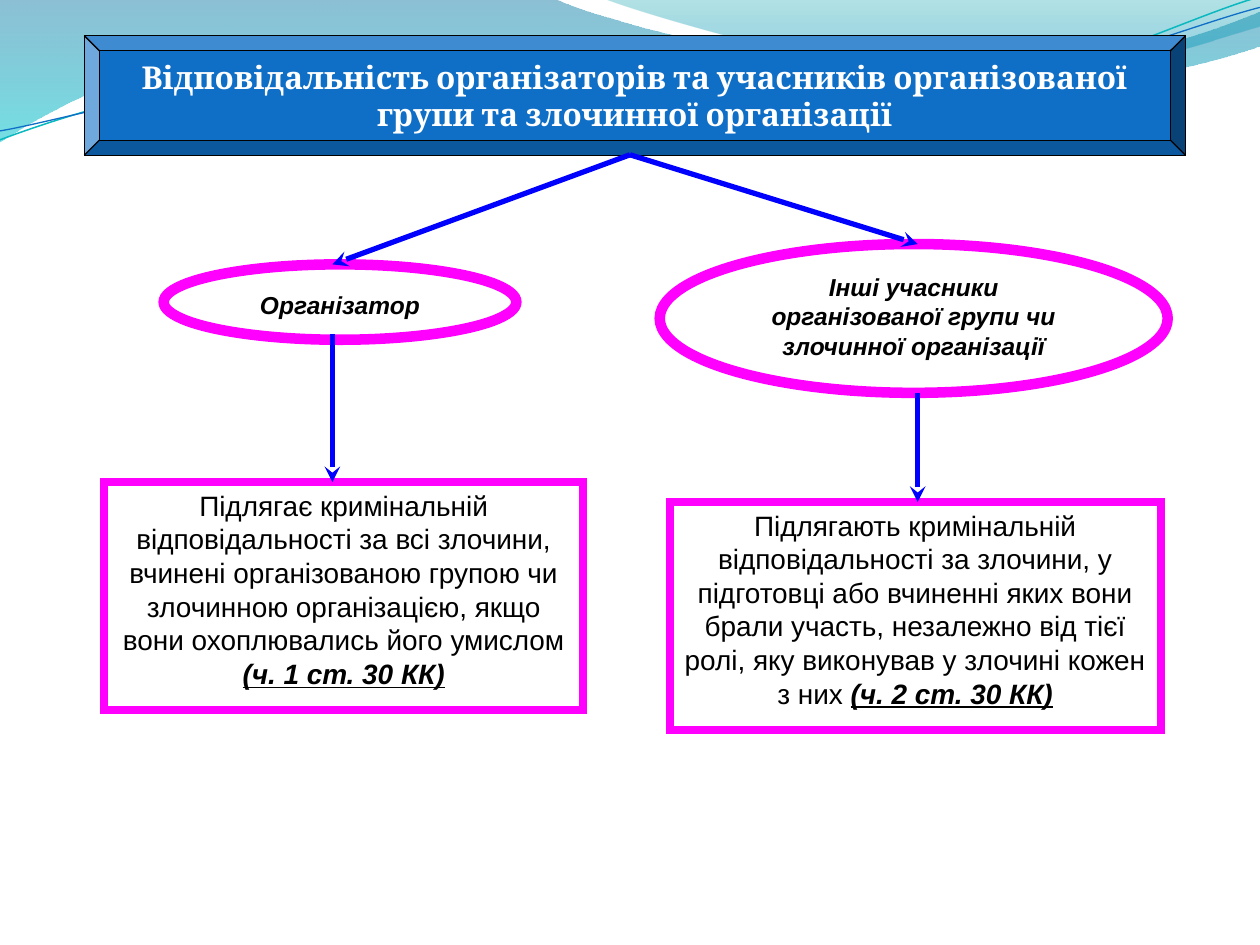
import dataclasses

import pptx
import pptx.dml.color
import pptx.enum.shapes
import pptx.enum.text
import pptx.oxml
import pptx.oxml.ns
import pptx.util

Cm = pptx.util.Cm
Pt = pptx.util.Pt
RGB = pptx.dml.color.RGBColor.from_string
SHAPES = pptx.enum.shapes.MSO_SHAPE
ANCHOR = pptx.enum.text.MSO_ANCHOR
qn = pptx.oxml.ns.qn
NAMESPACE = pptx.oxml.ns.nsdecls("a")


@dataclasses.dataclass(frozen=True)
class Theme:
    white: str = "FFFFFF"
    black: str = "000000"
    banner: str = "0F6FC6"
    border: str = "FF00FF"
    arrow: str = "0000FF"
    teal: str = "0AB8BF"
    lower_wave: tuple = ((0, "0074A1", 45), (1, "00C6CF", 55))
    upper_wave: tuple = ((0, "00A1A9", 30), (0.8, "008BBF", 45))
    heading_font: str = "Cambria"
    text_font: str = "Arial"
    heading_size: int = 18
    role_size: int = 14
    rule_size: int = 16


THEME = Theme()
HEADING = {"name": THEME.heading_font, "size": Pt(THEME.heading_size), "bold": True}
ROLE = {"name": THEME.text_font, "size": Pt(THEME.role_size), "bold": True, "italic": True}
RULE = {"name": THEME.text_font, "size": Pt(THEME.rule_size)}
ARTICLE = RULE | {"bold": True, "italic": True, "underline": True}

LOWER_WAVE = [
    [(0, 0)], [(11.18, -0.03)],
    [(12.09, 0.43), (16.87, 1.6), (19.25, 1.6)],
    [(21.67, 1.6), (24.33, 0.66), (25.4, 0.23)],
    [(25.43, 0.91)],
    [(24.97, 1.12), (22.1, 1.93), (18.95, 1.91)],
    [(15.8, 1.91), (9.7, 0.71), (6.53, 0.86)],
    [(3.28, 0.91), (1.17, 2.11), (-0.03, 2.87)],
]
UPPER_WAVE = [
    [(12.17, -0.03)],
    [(12.93, 0.28), (17.32, 1.57), (19.53, 1.65)],
    [(21.74, 1.75), (24.41, 0.81), (25.4, 0.53)],
    [(25.4, 0)],
]
TEAL_STRAND = [
    [(0, 2.82)],
    [(1.22, 2.36), (4.01, 1.45), (7.04, 1.32)],
    [(10.03, 1.19), (15.06, 2.26), (18.11, 2.03)],
    [(21.16, 1.8), (23.83, 0.38), (25.35, -0.05)],
]
BLUE_STRAND = [
    [(0, 2.64)],
    [(1.19, 2.44), (4.17, 1.55), (7.19, 1.42)],
    [(10.24, 1.3), (15.16, 2.13), (18.21, 1.91)],
    [(21.23, 1.7), (23.9, 0.53), (25.4, 0.15)],
]


def add_outline(slide, segments, close):
    start, *rest = [(round(x * 100), round(y * 100)) for segment in segments for x, y in segment]
    builder = slide.shapes.build_freeform(*start, scale=Cm(0.01))
    builder.add_line_segments(rest, close=close)
    outline = builder.convert_to_shape()
    outline.shadow.inherit = False
    steps = iter(list(outline.element.spPr.iter(qn("a:lnTo"))))
    for segment in segments[1:]:
        group = [next(steps) for _ in segment]
        if len(group) == 3:
            curve = pptx.oxml.parse_xml(f"<a:cubicBezTo {NAMESPACE}/>")
            group[0].addprevious(curve)
            for step in group:
                curve.append(step[0])
                step.getparent().remove(step)
    return outline


def add_wave(slide, segments, stops):
    wave = add_outline(slide, segments, True)
    wave.line.fill.background()
    wave.fill.gradient()
    wave.fill.gradient_angle = 270
    for stop, (position, color, _) in zip(wave.fill.gradient_stops, stops):
        stop.position = position
        stop.color.rgb = RGB(color)
    for color, (_, _, opacity) in zip(wave.element.spPr.iter(qn("a:srgbClr")), stops):
        color.append(pptx.oxml.parse_xml(f'<a:alpha {NAMESPACE} val="{opacity * 1000}"/>'))


def add_strand(slide, segments, color, width):
    strand = add_outline(slide, segments, False)
    strand.fill.background()
    strand.line.color.rgb = RGB(color)
    strand.line.width = Pt(width)


def add_box(slide, kind, place, fill, border, width):
    box = slide.shapes.add_shape(kind, *map(Cm, place))
    box.shadow.inherit = False
    box.fill.solid()
    box.fill.fore_color.rgb = RGB(fill)
    box.line.color.rgb = RGB(border)
    box.line.width = Pt(width)
    box.element.spPr.find(qn("a:ln")).append(
        pptx.oxml.parse_xml(f'<a:miter {NAMESPACE} lim="800000"/>'))
    return box


def write(box, runs, color, anchor):
    frame = box.text_frame
    frame.word_wrap = True
    frame.vertical_anchor = anchor
    paragraph = frame.paragraphs[0]
    paragraph.alignment = pptx.enum.text.PP_ALIGN.CENTER
    for text, style in runs:
        run = paragraph.add_run()
        run.text = text
        run.font.color.rgb = RGB(color)
        for attribute, value in style.items():
            setattr(run.font, attribute, value)


def add_heading(slide, place, text):
    banner = add_box(slide, SHAPES.BEVEL, place, THEME.banner, THEME.black, 0.75)
    banner.adjustments[0] = 0.125
    write(banner, [(text, HEADING)], THEME.white, ANCHOR.MIDDLE)


def add_role(slide, place, text, anchor):
    role = add_box(slide, SHAPES.OVAL, place, THEME.white, THEME.border, 6)
    write(role, [(text, ROLE)], THEME.black, anchor)
    return role


def add_rule(slide, place, text, article):
    rule = add_box(slide, SHAPES.RECTANGLE, place, THEME.white, THEME.border, 4.5)
    write(rule, [(text, RULE), (article, ARTICLE)], THEME.black, ANCHOR.TOP)


def add_arrow(slide, start, end):
    straight = pptx.enum.shapes.MSO_CONNECTOR.STRAIGHT
    arrow = slide.shapes.add_connector(straight, *map(Cm, (*start, *end)))
    arrow.line.color.rgb = RGB(THEME.arrow)
    arrow.line.width = Pt(3)
    properties = arrow.element.spPr
    properties.find(qn("a:ln")).append(
        pptx.oxml.parse_xml(f'<a:tailEnd {NAMESPACE} type="stealth"/>'))
    properties.append(pptx.oxml.parse_xml(f"<a:effectLst {NAMESPACE}/>"))


def main():
    deck = pptx.Presentation()
    deck.slide_width, deck.slide_height = Cm(25.4), Cm(19.05)
    slide = deck.slides.add_slide(deck.slide_layouts[6])

    add_wave(slide, LOWER_WAVE, THEME.lower_wave)
    add_wave(slide, UPPER_WAVE, THEME.upper_wave)
    add_strand(slide, TEAL_STRAND, THEME.teal, 0.85)
    add_strand(slide, BLUE_STRAND, THEME.banner, 0.75)

    add_heading(slide, (1.7, 0.72, 22.2, 2.41),
                "Відповідальність організаторів та учасників організованої групи та злочинної організації")
    organizer = add_role(slide, (3.3, 5.33, 7.11, 1.52), "Організатор", ANCHOR.MIDDLE)
    organizer.text_frame.margin_top = Cm(0.23)
    add_rule(slide, (2.1, 9.72, 9.66, 4.6),
             "Підлягає кримінальній відповідальності за всі злочини, вчинені організованою групою "
             "чи злочинною організацією, якщо вони охоплювались його умислом ",
             "(ч. 1 ст. 30 КК)")
    add_role(slide, (13.3, 4.92, 10.24, 3),
             "Інші учасники організованої групи чи злочинної організації", ANCHOR.TOP)
    add_rule(slide, (13.5, 10.12, 9.9, 4.6),
             "Підлягають кримінальній відповідальності за злочини, у підготовці або вчиненні яких вони "
             "брали участь, незалежно від тієї ролі, яку виконував у злочині кожен з них ",
             "(ч. 2 ст. 30 КК)")

    fork = (12.7, 3.12)
    for x, role_top, role_bottom, rule_top in ((6.7, 5.33, 6.73, 9.72), (18.5, 4.92, 7.92, 10.12)):
        add_arrow(slide, fork, (x, role_top))
        add_arrow(slide, (x, role_bottom), (x, rule_top))

    deck.save("out.pptx")


if __name__ == "__main__":
    main()
